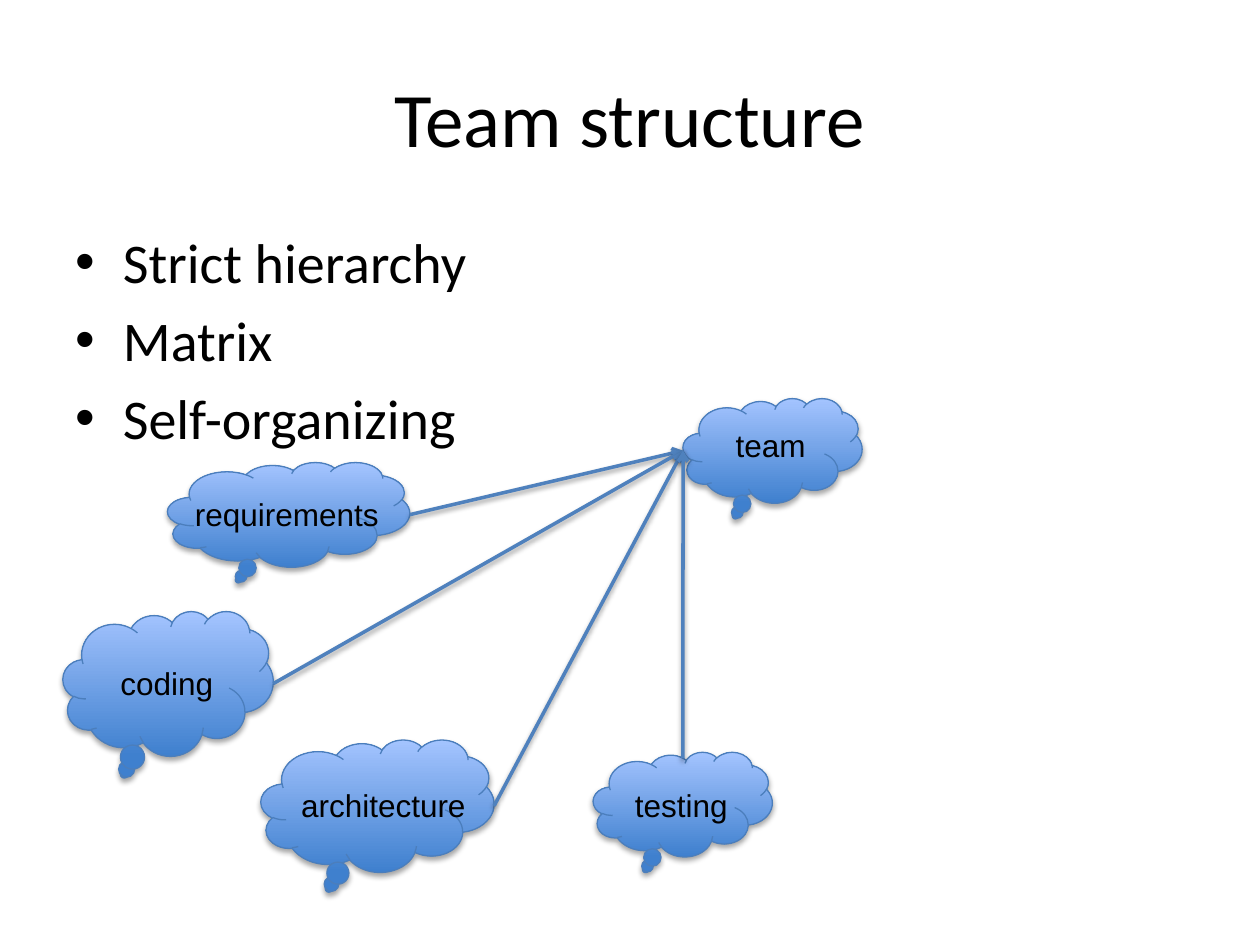
from dataclasses import dataclass

from lxml import etree
from pptx import Presentation
from pptx import util as u
from pptx.dml.color import RGBColor
from pptx.enum import shapes, text
from pptx.oxml import ns

COLORS = {
    "text": "000000",
    "cloud bottom": "3F80CE",
    "cloud top": "A4C4FF",
    "outline": "4B7EBC",
    "arrow": "4F81BD",
    "shadow": "000000",
}


@dataclass
class Box:
    """A rectangle in centimetres."""
    left: float
    top: float
    width: float
    height: float

    def lengths(self) -> list:
        return [u.Cm(v) for v in (self.left, self.top, self.width, self.height)]

    def point(self, across: float, down: float) -> list:
        return [u.Cm(self.left + across * self.width),
                u.Cm(self.top + down * self.height)]


@dataclass
class Cloud:
    word: str
    box: Box
    label: Box
    wrap: bool = False
    arrow_start: tuple = (1, 0.5)  # fractions of the cloud's width and height


TEAM = Cloud("team", Box(13.77, 8.03, 3.61, 2.11), Box(14.58, 8.46, 1.93, 1.02))
ACTIVITIES = [
    Cloud("requirements", Box(3.38, 9.32, 4.88, 2.11), Box(3.68, 9.86, 4.24, 1.02)),
    Cloud("coding", Box(1.27, 12.32, 4.24, 2.92), Box(2.18, 13.26, 2.41, 1.02)),
    Cloud("architecture", Box(5.26, 14.91, 4.7, 2.67), Box(5.82, 15.72, 4.01, 1.02),
          wrap=True),
    Cloud("testing", Box(11.96, 15.16, 3.61, 2.11), Box(12.55, 15.72, 2.41, 1.02),
          arrow_start=(0.5, 0.06)),
]
BULLETS = ["Strict hierarchy", "Matrix", "Self-organizing"]


def rgb(name: str) -> RGBColor:
    return RGBColor.from_string(COLORS[name])


def format_font(font, **values) -> None:
    for name, value in values.items():
        setattr(font, name, value)
    font.color.rgb = rgb("text")


def add_shadow(item, distance: float, opacity: int) -> None:
    """Give a shape or connector a soft shadow straight below; call after its line is set."""
    effects = etree.SubElement(item._element.spPr, ns.qn("a:effectLst"))
    shadow = etree.SubElement(
        effects, ns.qn("a:outerShdw"), blurRad=str(u.Pt(3.1)),
        dist=str(u.Pt(distance)), dir="5400000", rotWithShape="0")
    color = etree.SubElement(shadow, ns.qn("a:srgbClr"), val=COLORS["shadow"])
    etree.SubElement(color, ns.qn("a:alpha"), val=str(opacity * 1000))


def draw_cloud(slide, cloud: Cloud) -> None:
    callout = slide.shapes.add_shape(
        shapes.MSO_SHAPE.CLOUD_CALLOUT, *cloud.box.lengths())
    callout.fill.gradient()
    callout.fill.gradient_angle = 90
    for stop, name in zip(callout.fill.gradient_stops, ("cloud bottom", "cloud top")):
        stop.color.rgb = rgb(name)
    callout.line.color.rgb = rgb("outline")
    callout.line.width = u.Pt(0.75)
    add_shadow(callout, distance=1.8, opacity=35)


def draw_arrow_to_team(slide, cloud: Cloud) -> None:
    arrow = slide.shapes.add_connector(
        shapes.MSO_CONNECTOR.STRAIGHT,
        *cloud.box.point(*cloud.arrow_start), *TEAM.box.point(0, 0.5))
    arrow.line.color.rgb = rgb("arrow")
    arrow.line.width = u.Pt(2)
    line = arrow._element.spPr.find(ns.qn("a:ln"))
    etree.SubElement(line, ns.qn("a:tailEnd"), type="arrow")
    add_shadow(arrow, distance=1.6, opacity=38)


def draw_label(slide, cloud: Cloud) -> None:
    frame = slide.shapes.add_textbox(*cloud.label.lengths()).text_frame
    frame.word_wrap = cloud.wrap
    frame.auto_size = text.MSO_AUTO_SIZE.SHAPE_TO_FIT_TEXT
    frame.text = cloud.word
    format_font(frame.paragraphs[0].runs[0].font, name="Arial", size=u.Pt(18))


def fill_placeholder(placeholder, box: Box, lines: list, size: int) -> None:
    placeholder.left, placeholder.top, placeholder.width, placeholder.height = box.lengths()
    placeholder.text_frame.text = "\n".join(lines)
    for paragraph in placeholder.text_frame.paragraphs:
        format_font(paragraph.runs[0].font, name="Calibri", size=u.Pt(size))


def main() -> None:
    deck = Presentation()
    deck.slide_width, deck.slide_height = u.Cm(25.4), u.Cm(19.05)
    slide = deck.slides.add_slide(deck.slide_layouts[1])

    title, body = slide.placeholders
    fill_placeholder(title, Box(1.27, 0.76, 22.86, 3.18), ["Team structure"], 44)
    fill_placeholder(body, Box(1.27, 4.45, 22.86, 12.57), BULLETS, 32)

    clouds = [*ACTIVITIES, TEAM]
    for cloud in clouds:
        draw_cloud(slide, cloud)
    for activity in ACTIVITIES:
        draw_arrow_to_team(slide, activity)
    for cloud in clouds:
        draw_label(slide, cloud)

    deck.save("out.pptx")


if __name__ == "__main__":
    main()
